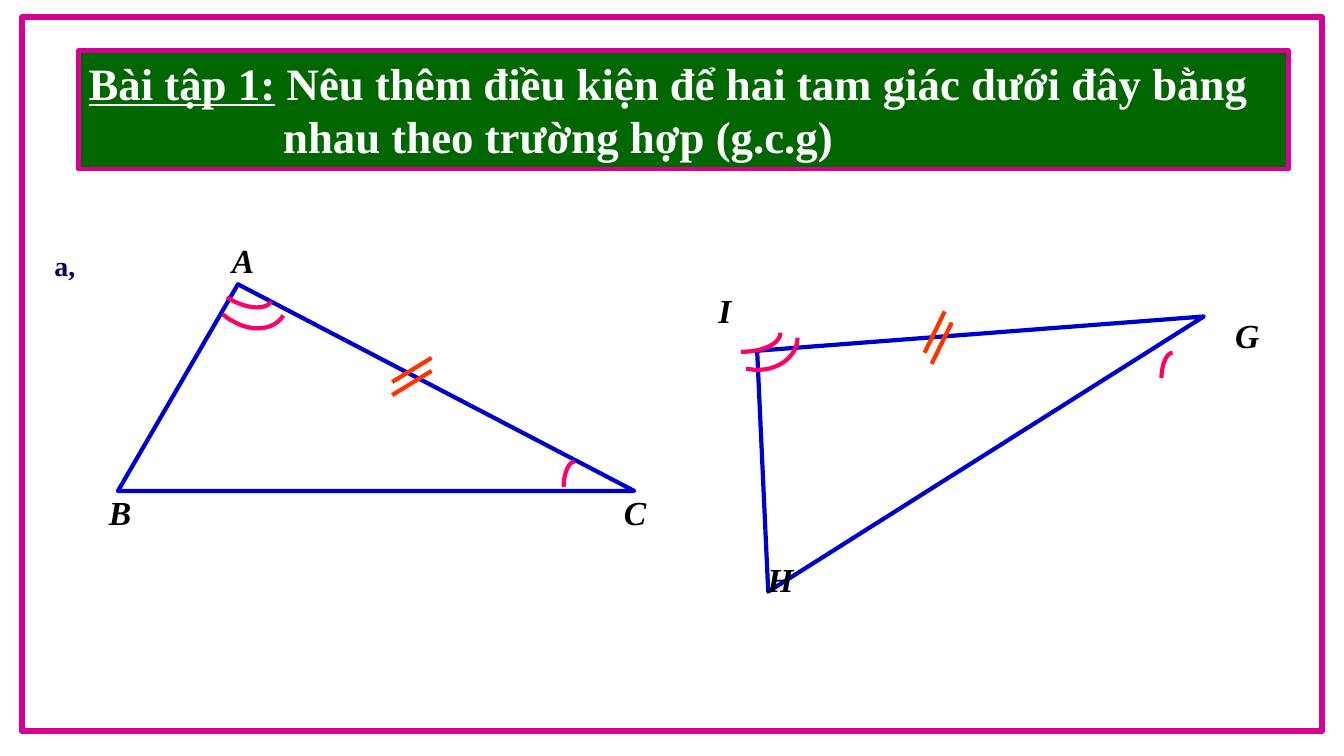
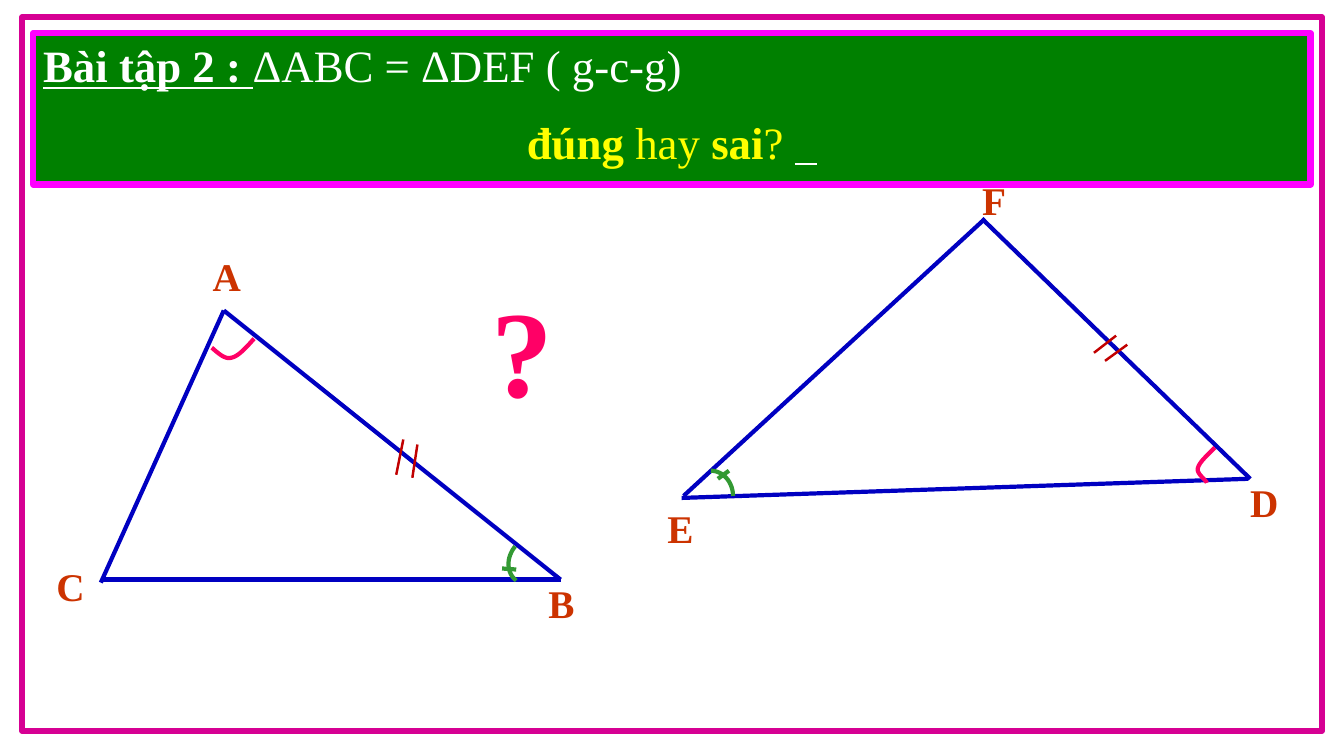
from lxml import etree
from pptx import Presentation
from pptx import util as u
from pptx.dml.color import RGBColor
from pptx.enum import shapes, text
from pptx.oxml.ns import qn

COLORS = {
    "frame": "D60093", "title_one": "006600", "title_two": "008000",
    "title_border": "FF00FF", "white": "FFFFFF", "yellow": "FFFF00",
    "black": "000000", "navy": "000066", "vertex": "CC3300",
    "side_one": "0000CC", "side_two": "0000C1", "tick_one": "FF3300",
    "tick_two": "C10000", "pink": "FF0066", "green": "339933",
}
FONT = "Times New Roman"
TITLE = {"size": u.Pt(32), "bold": True}
CURVE_STEPS = 16


# Shared formatting
def set_line(line, color, width):
    line.color.rgb = RGBColor.from_string(COLORS[color])
    line.width = u.Pt(width)


def add_run(paragraph, wording, color, font_format):
    run = paragraph.add_run()
    run.text = wording
    run.font.name = FONT
    run.font.color.rgb = RGBColor.from_string(COLORS[color])
    for name, value in font_format.items():
        setattr(run.font, name, value)


def set_half_line_before(paragraph):
    before = etree.Element(qn("a:spcBef"))
    etree.SubElement(before, qn("a:spcPct"), val="50000")
    paragraph._p.get_or_add_pPr().insert(0, before)


def set_hanging_indent(paragraph, inches):
    properties = paragraph._p.get_or_add_pPr()
    properties.set("marL", str(u.Inches(inches)))
    properties.set("indent", str(-u.Inches(inches)))


# Frame and title band
def add_rectangle(slide, box, line_color, width, fill=None):
    shape = slide.shapes.add_shape(
        shapes.MSO_SHAPE.RECTANGLE, *map(u.Inches, box))
    shape.shadow.inherit = False
    set_line(shape.line, line_color, width)
    if fill:
        shape.fill.solid()
        shape.fill.fore_color.rgb = RGBColor.from_string(COLORS[fill])
    else:
        shape.fill.background()
    return shape


def add_title(slide, box, fill, line_color, width, indent, paragraphs):
    frame = add_rectangle(slide, box, line_color, width, fill).text_frame
    frame.word_wrap = True
    frame.vertical_anchor = text.MSO_ANCHOR.TOP
    frame.auto_size = text.MSO_AUTO_SIZE.SHAPE_TO_FIT_TEXT
    for index, (alignment, runs) in enumerate(paragraphs):
        paragraph = frame.add_paragraph() if index else frame.paragraphs[0]
        paragraph.alignment = alignment
        set_hanging_indent(paragraph, indent)
        set_half_line_before(paragraph)
        for wording, color, changes in runs:
            add_run(paragraph, wording, color, {**TITLE, **changes})


def add_framed_slide(presentation):
    slide = presentation.slides.add_slide(presentation.slide_layouts[6])
    add_rectangle(slide, (0.22, 0.17, 12.89, 7.08), "frame", 4.5)
    return slide


# Text labels
def add_label(slide, wording, box, color, size, alignment=text.PP_ALIGN.LEFT,
              italic=False, tight=False):
    frame = slide.shapes.add_textbox(*map(u.Inches, box)).text_frame
    frame.word_wrap = not tight
    frame.auto_size = text.MSO_AUTO_SIZE.SHAPE_TO_FIT_TEXT
    paragraph = frame.paragraphs[0]
    paragraph.alignment = alignment
    if tight:
        for side in ("left", "top", "right", "bottom"):
            setattr(frame, f"margin_{side}", 0)
    else:
        set_half_line_before(paragraph)
    add_run(paragraph, wording, color,
            {"size": u.Pt(size), "bold": True, "italic": italic})


# Lines, triangles and angle marks
def add_lines(slide, segments, color, width=3):
    for segment in segments:
        connector = slide.shapes.add_connector(
            shapes.MSO_CONNECTOR.STRAIGHT, *map(u.Inches, segment))
        set_line(connector.line, color, width)
        etree.SubElement(connector._element.spPr, qn("a:effectLst"))


def add_double_tick(slide, segment, shift, color):
    x1, y1, x2, y2 = segment
    dx, dy = shift
    add_lines(slide, [segment, (x1 + dx, y1 + dy, x2 + dx, y2 + dy)], color)


def add_outline(slide, points, color, close):
    points = [(u.Inches(x), u.Inches(y)) for x, y in points]
    builder = slide.shapes.build_freeform(*points[0])
    builder.add_line_segments(points[1:], close=close)
    shape = builder.convert_to_shape()
    shape.shadow.inherit = False
    shape.fill.background()
    set_line(shape.line, color, 3)


def bezier_point(controls, t):
    weights = ((1 - t) ** 3, 3 * t * (1 - t) ** 2, 3 * t ** 2 * (1 - t), t ** 3)
    return tuple(sum(weight * point[axis]
                     for weight, point in zip(weights, controls))
                 for axis in (0, 1))


def add_angle_mark(slide, controls, color="pink"):
    points = [controls[0]]
    for start in range(0, len(controls) - 1, 3):
        points += [bezier_point(controls[start:start + 4], step / CURVE_STEPS)
                   for step in range(1, CURVE_STEPS + 1)]
    add_outline(slide, points, color, close=False)


# Slides
def build_exercise_one(presentation):
    slide = add_framed_slide(presentation)
    for triangle in (
        [(1.17, 4.87), (6.29, 4.87), (2.36, 2.82)],
        [(7.62, 5.87), (11.94, 3.14), (7.51, 3.48)],
    ):
        add_outline(slide, triangle, "side_one", close=True)

    for vertex, left, top in (
        ("A", 1.89, 2.33), ("B", 0.67, 4.83), ("C", 5.78, 4.83),
        ("I", 6.67, 2.83), ("G", 11.85, 3.08), ("H", 7.22, 5.5),
    ):
        add_label(slide, vertex, (left, top, 1.04, 0.5), "black", 24,
                  text.PP_ALIGN.CENTER, italic=True)
    add_label(slide, "a,", (0.44, 2.42, 0.78, 0.43), "navy", 20)

    # Double arcs at A and I, single arcs at C and G
    for controls in (
        [(2.69, 2.99), (2.64, 3.08), (2.44, 3.07), (2.25, 2.95)],
        [(2.81, 3.13), (2.72, 3.28), (2.49, 3.3), (2.3, 3.18),
         (2.27, 3.17), (2.24, 3.14), (2.21, 3.12)],
        [(7.74, 3.3), (7.74, 3.41), (7.57, 3.49), (7.35, 3.49)],
        [(7.91, 3.35), (7.91, 3.53), (7.73, 3.67), (7.51, 3.67),
         (7.47, 3.67), (7.44, 3.66), (7.4, 3.66)],
    ):
        add_angle_mark(slide, controls)
    for x, y in ((5.59, 4.58), (11.52, 3.5)):
        add_angle_mark(slide, [(x + 0.11, y), (x + 0.05, y),
                               (x, y + 0.12), (x, y + 0.25)])

    # Equal sides
    add_double_tick(slide, (4.28, 3.55, 3.89, 3.79), (0, 0.13), "tick_one")
    add_double_tick(slide, (9.37, 3.09, 9.17, 3.5), (0.07, 0.11), "tick_one")

    add_title(slide, (0.78, 0.5, 12, 1.18), "title_one", "frame", 3, 1.93, [
        (text.PP_ALIGN.LEFT, [
            ("Bài tập 1:", "white", {"underline": True}),
            (" Nêu thêm điều kiện để hai tam giác dưới đây bằng nhau "
             "theo trường hợp (g.c.g)", "white", {}),
        ]),
    ])


def build_exercise_two(presentation):
    slide = add_framed_slide(presentation)
    # Triangles ABC and DEF
    add_lines(slide, [
        (5.56, 5.75, 2.22, 3.08), (2.22, 3.08, 1, 5.78), (1, 5.75, 5.56, 5.75),
        (9.77, 2.17, 6.78, 4.92), (9.74, 2.17, 12.4, 4.75),
        (12.38, 4.75, 6.76, 4.94),
    ], "side_two")
    # Equal sides
    add_lines(slide, [
        (4.14, 4.41, 4.09, 4.74), (4, 4.36, 3.93, 4.71),
        (11.07, 3.33, 10.85, 3.5), (11.18, 3.42, 10.96, 3.58),
    ], "tick_two", 1.75)

    for vertex, left, top, width in (
        ("A", 2.11, 2.5, 0.28), ("B", 5.44, 5.75, 0.26),
        ("C", 0.56, 5.58, 0.28), ("D", 12.4, 4.75, 0.28),
        ("E", 6.62, 5, 0.26), ("F", 9.74, 1.75, 0.24),
    ):
        add_label(slide, vertex, (left, top, width, 0.47), "vertex", 28,
                  tight=True)
    add_label(slide, "?", (4.78, 2.67, 1.67, 1.57), "pink", 88)

    # Equal angles: A and D in pink, B and E in green with a cross tick
    for color, controls in (
        ("pink", [(12.05, 4.44), (11.97, 4.52), (11.89, 4.59), (11.88, 4.65),
                  (11.87, 4.7), (11.96, 4.76), (11.97, 4.79)]),
        ("pink", [(2.52, 3.36), (2.44, 3.45), (2.36, 3.54), (2.29, 3.55),
                  (2.22, 3.57), (2.13, 3.47), (2.1, 3.45)]),
        ("green", [(7.05, 4.67), (7.17, 4.67), (7.27, 4.78), (7.27, 4.92)]),
        ("green", [(5.12, 5.76), (5.02, 5.68), (5.02, 5.53), (5.11, 5.42)]),
    ):
        add_angle_mark(slide, controls, color)
    add_lines(slide, [(7.23, 4.67, 7.12, 4.75), (4.98, 5.64, 5.12, 5.65)],
              "green")

    # The question ends in an underlined blank for the answer
    regular = {"bold": False}
    add_title(slide, (0.33, 0.33, 12.67, 1.5), "title_two", "title_border",
              4.5, 2.12, [
        (text.PP_ALIGN.LEFT, [
            ("Bài tập 2 : ", "white", {"underline": True}),
            ("ΔABC = ΔDEF ( g-c-g)", "white", regular),
        ]),
        (text.PP_ALIGN.CENTER, [
            ("đúng ", "yellow", {}), ("hay ", "yellow", regular),
            ("sai", "yellow", {}), ("? ", "yellow", regular),
            ("  ", "white", {"bold": False, "underline": True}),
        ]),
    ])


def main():
    presentation = Presentation()
    presentation.slide_width = u.Inches(13.33)
    presentation.slide_height = u.Inches(7.5)
    build_exercise_one(presentation)
    build_exercise_two(presentation)
    presentation.save("out.pptx")


if __name__ == "__main__":
    main()
